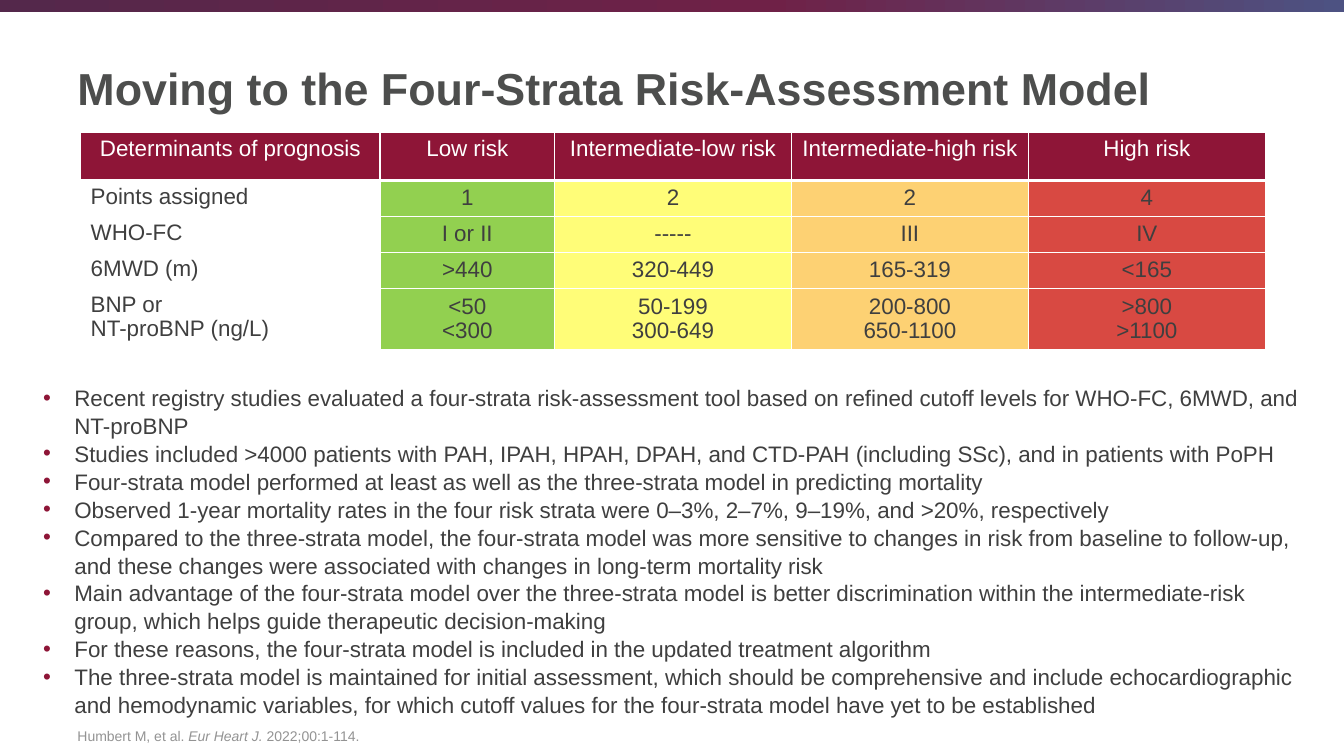
"""Build the slide on the four-strata risk-assessment model."""
from copy import deepcopy

from lxml.etree import SubElement as Sub
from pptx import Presentation
from pptx.dml.color import RGBColor as RGB
from pptx.enum.shapes import MSO_SHAPE as Shape
from pptx.enum.text import MSO_ANCHOR as Anchor, PP_ALIGN as Align
from pptx.oxml.ns import qn
from pptx.util import Inches, Pt

HUES = {
    "title": "4D4E4D", "text": "3F3F3F", "cite": "939393", "white": "FFFFFF",
    "wine": "8E1537", "low": "92D050", "midlow": "FFFD78",
    "midhigh": "FDD173", "high": "D84942",
}
STOPS = [(0, "54284B"), (0.57, "6F2147"), (1, "4D5282")]
FILLS = [None, "low", "midlow", "midhigh", "high"]
WIDTHS = [2.97, 1.73, 2.35, 2.35, 2.35]
HEIGHTS = [0.48, 0.35, 0.35, 0.35, 0.6]
ROWS = [
    ["Determinants of prognosis", "Low risk", "Intermediate-low risk",
     "Intermediate-high risk", "High risk"],
    ["Points assigned", "1", "2", "2", "4"],
    ["WHO-FC", "I or II", "-----", "III", "IV"],
    ["6MWD (m)", ">440", "320-449", "165-319", "<165"],
    ["BNP or\nNT-proBNP (ng/L)", "<50\n<300", "50-199\n300-649",
     "200-800\n650-1100", ">800\n>1100"],
]
POINTS = [
    "Recent registry studies evaluated a four-strata risk-assessment tool based on "
    "refined cutoff levels for WHO-FC, 6MWD, and NT-proBNP",
    "Studies included >4000 patients with PAH, IPAH, HPAH, DPAH, and CTD-PAH "
    "(including SSc), and in patients with PoPH",
    "Four-strata model performed at least as well as the three-strata model in "
    "predicting mortality",
    "Observed 1-year mortality rates in the four risk strata were 0–3%, 2–7%, 9–19%, "
    "and >20%, respectively",
    "Compared to the three-strata model, the four-strata model was more sensitive to "
    "changes in risk from baseline to follow-up, and these changes were associated "
    "with changes in long-term mortality risk",
    "Main advantage of the four-strata model over the three-strata model is better "
    "discrimination within the intermediate-risk group, which helps guide "
    "therapeutic decision-making",
    "For these reasons, the four-strata model is included in the updated treatment "
    "algorithm",
    "The three-strata model is maintained for initial assessment, which should be "
    "comprehensive and include echocardiographic and hemodynamic variables, for "
    "which cutoff values for the four-strata model have yet to be established",
]


def add_run(para, text, size, hue, bold=False, italic=False):
    run = para.add_run()
    run.text = text
    font = run.font
    font.name, font.size = "Arial", Pt(size)
    font.bold, font.italic = bold, italic
    font.color.rgb = RGB.from_string(HUES[hue])


def add_para(frame, first):
    return frame.paragraphs[0] if first else frame.add_paragraph()


def add_text(slide, area, anchor):
    frame = slide.shapes.add_textbox(*map(Inches, area)).text_frame
    frame.word_wrap = True
    frame.vertical_anchor = anchor
    return frame


def add_band(slide):
    band = slide.shapes.add_shape(
        Shape.RECTANGLE, 0, 0, Inches(13.33), Inches(0.12))
    band.shadow.inherit = False
    band.line.fill.background()
    band.fill.gradient()
    band.fill.gradient_angle = 0
    stops = band._element.spPr.find(".//" + qn("a:gsLst"))
    stops.append(deepcopy(stops[-1]))
    for stop, (place, hue) in zip(band.fill.gradient_stops, STOPS):
        stop.position = place
        stop.color.rgb = RGB.from_string(hue)


def add_edges(cell, top, base):
    props = cell._tc.get_or_add_tcPr()
    sides = [("lnL", 1), ("lnR", 1), ("lnT", top), ("lnB", base)]
    for spot, (side, width) in enumerate(sides):
        line = Sub(props, qn("a:" + side), w=str(Pt(width)))
        fill = Sub(line, qn("a:solidFill"))
        Sub(fill, qn("a:srgbClr"), val=HUES["white"])
        props.insert(spot, line)


def fill_cell(cell, text, row, col):
    head = row == 0
    hue = "wine" if head else FILLS[col]
    if hue:
        cell.fill.solid()
        cell.fill.fore_color.rgb = RGB.from_string(HUES[hue])
    else:
        cell.fill.background()
    cell.vertical_anchor = Anchor.MIDDLE if col and not head else Anchor.TOP
    for spot, line in enumerate(text.split("\n")):
        para = add_para(cell.text_frame, spot == 0)
        para.alignment = Align.CENTER if col or head else Align.LEFT
        para.line_spacing = 0.96
        add_run(para, line, 16, "white" if head else "text")
    add_edges(cell, 3 if row == 1 else 1, 3 if head else 1)


def add_grid(slide):
    area = map(Inches, (0.8, 1.31, sum(WIDTHS), sum(HEIGHTS)))
    grid = slide.shapes.add_table(len(ROWS), len(WIDTHS), *area).table
    grid.horz_banding = False
    for col, width in zip(grid.columns, WIDTHS):
        col.width = Inches(width)
    for row, height in zip(grid.rows, HEIGHTS):
        row.height = Inches(height)
    for row, texts in enumerate(ROWS):
        for col, text in enumerate(texts):
            fill_cell(grid.cell(row, col), text, row, col)


def add_points(slide):
    frame = add_text(slide, (0.33, 3.75, 12.67, 3.33), Anchor.TOP)
    for spot, text in enumerate(POINTS):
        para = add_para(frame, spot == 0)
        para.line_spacing = 1.04
        props = para._p.get_or_add_pPr()
        props.set("marL", str(Inches(0.31)))
        props.set("indent", str(Inches(-0.31)))
        tint = Sub(props, qn("a:buClr"))
        Sub(tint, qn("a:srgbClr"), val=HUES["wine"])
        Sub(props, qn("a:buFont"), typeface="Arial")
        Sub(props, qn("a:buChar"), char="•")
        add_run(para, text, 16, "text")


def main():
    deck = Presentation()
    deck.slide_width, deck.slide_height = Inches(13.33), Inches(7.5)
    slide = deck.slides.add_slide(deck.slide_layouts[6])
    add_band(slide)
    title = add_text(slide, (0.67, 0.22, 11.75, 1.3), Anchor.MIDDLE)
    add_run(title.paragraphs[0], "Moving to the Four-Strata Risk-Assessment Model",
            32, "title", bold=True)
    add_grid(slide)
    add_points(slide)
    cite = add_text(slide, (0.67, 6.95, 11.75, 0.48), Anchor.BOTTOM).paragraphs[0]
    add_run(cite, "Humbert M, et al. ", 10, "cite")
    add_run(cite, "Eur Heart J. ", 10, "cite", italic=True)
    add_run(cite, "2022;00:1-114.", 10, "cite")
    deck.save("out.pptx")


if __name__ == "__main__":
    main()
